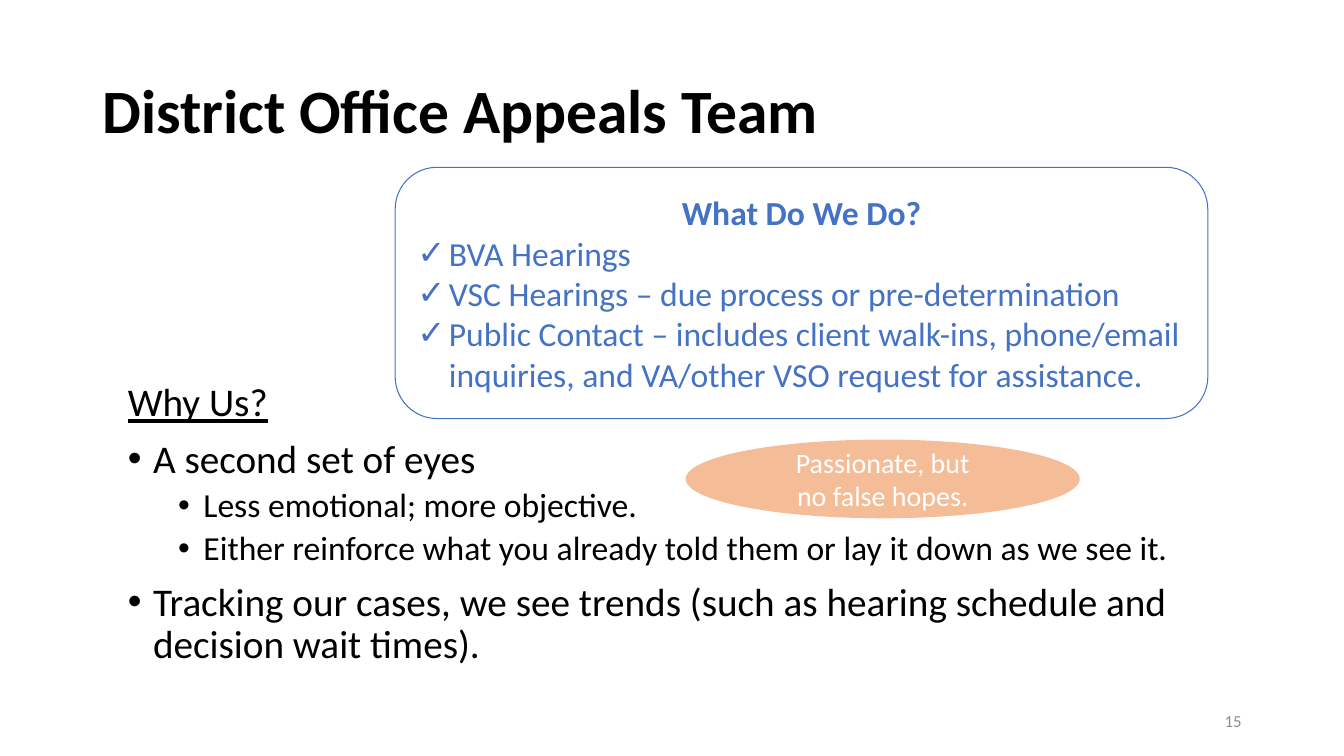
from lxml import etree
from pptx import Presentation
from pptx.dml.color import RGBColor
from pptx.enum.shapes import MSO_SHAPE
from pptx.enum.text import MSO_ANCHOR, PP_ALIGN
from pptx.oxml.ns import qn
from pptx.util import Pt

ROUNDED, ELLIPSE = MSO_SHAPE.ROUNDED_RECTANGLE, MSO_SHAPE.OVAL
TOP, MIDDLE = MSO_ANCHOR.TOP, MSO_ANCHOR.MIDDLE
LEFT, CENTER, RIGHT = PP_ALIGN.LEFT, PP_ALIGN.CENTER, PP_ALIGN.RIGHT

BLACK, WHITE, GRAY = "000000", "FFFFFF", "8C8C8C"
BLUE, ORANGE = "4472C4", "ED7D31"


def rgb(code):
    return RGBColor.from_string(code)


class SlideBuilder:
    font_name = "Calibri"

    def __init__(self, slide):
        self.slide = slide

    def add_bullet(self, paragraph, bullet, margin, hang):
        """Give the paragraph a hanging bullet; margin and hang are in points."""
        properties = paragraph._p.get_or_add_pPr()
        properties.set("marL", str(Pt(margin)))
        properties.set("indent", str(-Pt(hang)))
        etree.SubElement(properties, qn("a:buFont")).set("typeface", "Arial")
        etree.SubElement(properties, qn("a:buChar")).set("char", bullet)

    def fill_frame(self, frame, paragraphs, anchor, color):
        """Fill the frame from (text, font values, paragraph values, bullet) tuples."""
        frame.word_wrap = True
        frame.vertical_anchor = anchor
        for index, (text, font, layout, bullet) in enumerate(paragraphs):
            paragraph = frame.paragraphs[0] if index == 0 else frame.add_paragraph()
            for name, value in layout.items():
                if index or name != "space_before":
                    setattr(paragraph, name, value)
            if bullet:
                self.add_bullet(paragraph, *bullet)
            run = paragraph.add_run()
            run.text = text
            for name, value in {"name": self.font_name, **font}.items():
                setattr(run.font, name, value)
            run.font.color.rgb = rgb(color)

    def text(self, box, paragraphs, anchor=MIDDLE, color=BLACK):
        area = self.slide.shapes.add_textbox(*map(Pt, box))
        self.fill_frame(area.text_frame, paragraphs, anchor, color)

    def shape(self, kind, box, paragraphs, color, fill=None, opacity=100, line=None):
        panel = self.slide.shapes.add_shape(kind, *map(Pt, box))
        panel.shadow.inherit = False
        if fill:
            panel.fill.solid()
            panel.fill.fore_color.rgb = rgb(fill)
            fill_color = panel.fill._xPr.find(qn("a:solidFill"))[0]
            etree.SubElement(fill_color, qn("a:alpha")).set("val", str(opacity * 1000))
        else:
            panel.fill.background()
        if line:
            panel.line.color.rgb = rgb(line)
            panel.line.width = Pt(0.75)
        else:
            panel.line.fill.background()
        self.fill_frame(panel.text_frame, paragraphs, MIDDLE, color)


def main():
    presentation = Presentation()
    presentation.slide_width, presentation.slide_height = Pt(960), Pt(540)
    builder = SlideBuilder(presentation.slides.add_slide(presentation.slide_layouts[6]))

    builder.text((66, 28.75, 828, 104.4), [
        ("District Office Appeals Team", {"size": Pt(44), "bold": True},
         {"line_spacing": 0.9}, None),
    ])

    major = {"line_spacing": 0.9, "space_before": Pt(10), "alignment": LEFT}
    minor = {**major, "space_before": Pt(5), "level": 1}
    major_font, minor_font = {"size": Pt(28)}, {"size": Pt(24)}
    major_bullet, minor_bullet = ("•", 18, 18), ("•", 54, 18)
    builder.text((84.25, 270, 791.25, 222.5), [
        ("Why Us?", {**major_font, "underline": True}, major, None),
        ("A second set of eyes", major_font, major, major_bullet),
        ("Less emotional; more objective.", minor_font, minor, minor_bullet),
        ("Either reinforce what you already told them or lay it down as we see it.",
         minor_font, minor, minor_bullet),
        ("Tracking our cases, we see trends (such as hearing schedule and "
         "decision wait times).", major_font, major, major_bullet),
    ], anchor=TOP)

    builder.text((678, 500.5, 216, 28.75), [
        ("15", {"size": Pt(12)}, {"alignment": RIGHT}, None),
    ], color=GRAY)

    duties = (
        "BVA Hearings",
        "VSC Hearings – due process or pre-determination",
        "Public Contact – includes client walk-ins, phone/email inquiries, "
        "and VA/other VSO request for assistance.",
    )
    heading = ("What Do We Do?", {"size": Pt(24), "bold": True},
               {"alignment": CENTER}, None)
    checked = [(duty, {"size": Pt(24)}, {"alignment": LEFT}, ("✓", 22.5, 22.5))
               for duty in duties]
    builder.shape(ROUNDED, (282.25, 119.5, 580.5, 179.5), [heading, *checked],
                  color=BLUE, line=BLUE)

    motto = [(words, {"size": Pt(20)}, {"alignment": CENTER}, None)
             for words in ("Passionate, but", "no false hopes.")]
    builder.shape(ELLIPSE, (489.75, 314, 281.5, 56.25), motto,
                  color=WHITE, fill=ORANGE, opacity=50)

    presentation.save("out.pptx")


if __name__ == "__main__":
    main()
